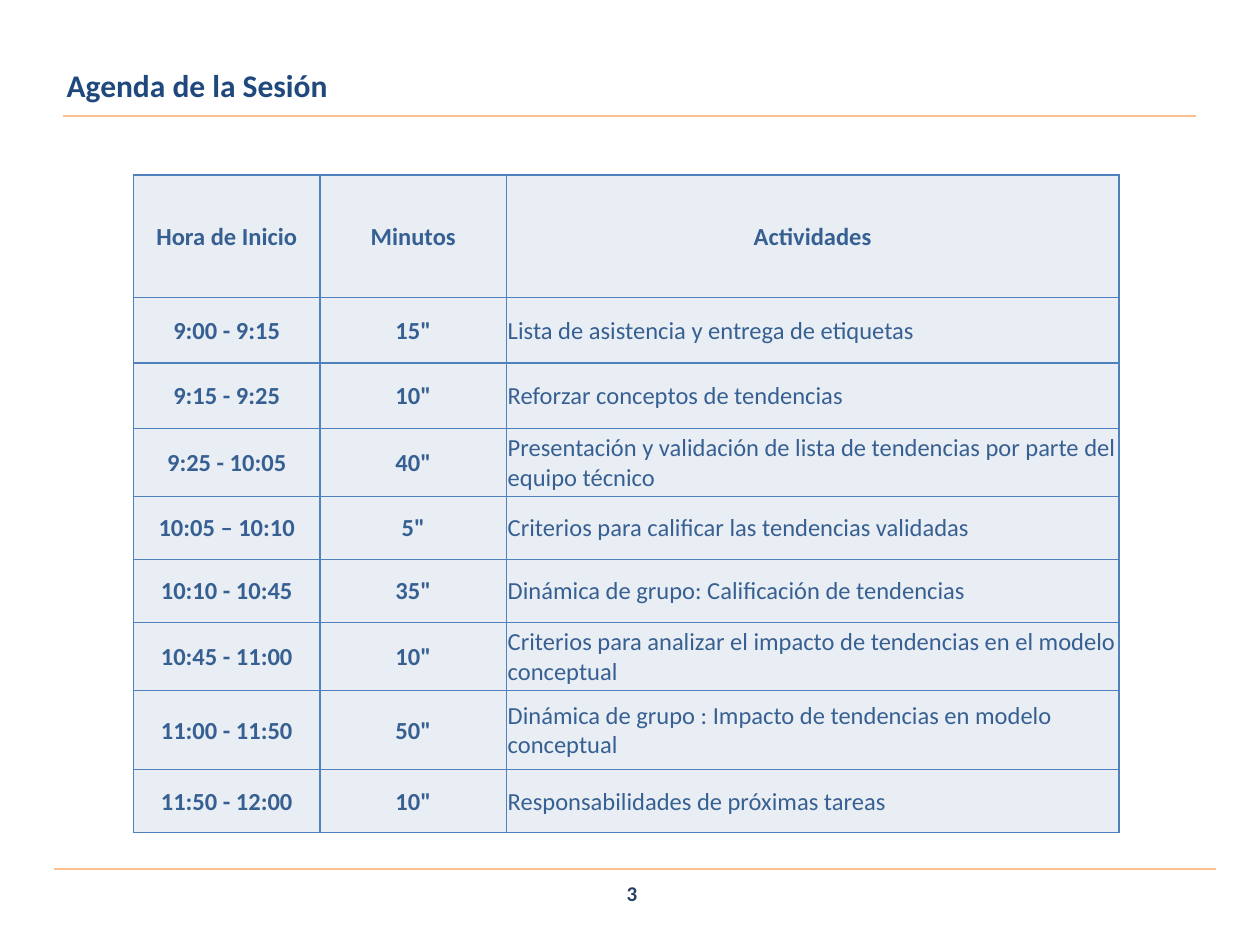
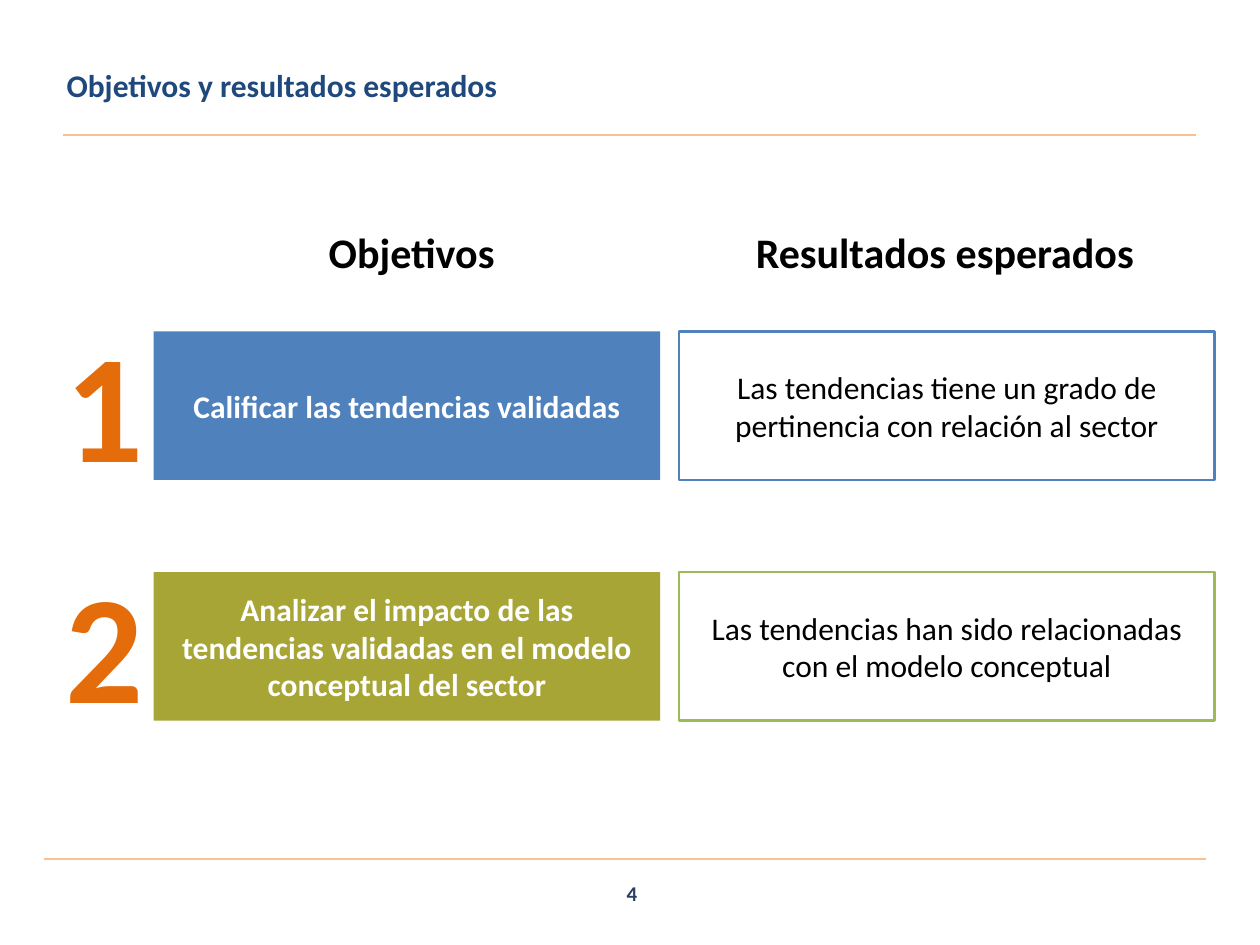
"""Builds the session agenda slide and the objectives slide."""
from dataclasses import dataclass

from lxml.etree import SubElement
from pptx import Presentation
from pptx.dml.color import RGBColor as Rgb
from pptx.enum.shapes import MSO_CONNECTOR as Connector, MSO_SHAPE as Shape
from pptx.enum.text import MSO_ANCHOR as Anchor, PP_ALIGN as Align
from pptx.oxml.ns import qn
from pptx.util import Inches, Pt


@dataclass(frozen=True)
class Theme:
    font: str = "Calibri"
    title: str = "1F497D"
    rule: str = "FAC090"
    page_number: str = "254061"
    table_text: str = "376092"
    table_fill: str = "E9EDF4"
    blue: str = "4F81BD"
    olive: str = "A7A536"
    green: str = "9BBB59"
    orange: str = "E46C0A"
    black: str = "000000"
    white: str = "FFFFFF"
    small_size: int = 12
    table_size: int = 14
    body_size: int = 18
    heading_size: int = 24
    numeral_size: int = 88
    rule_width: float = 1.25
    box_line_width: float = 1.5
    border_width: float = 1


THEME = Theme()

HEADERS = ("Hora de Inicio", "Minutos", "Actividades")
AGENDA = (
    ("9:00 - 9:15", '15"', "Lista de asistencia y entrega de etiquetas"),
    ("9:15 - 9:25", '10"', "Reforzar conceptos de tendencias"),
    ("9:25 - 10:05", '40"', "Presentación y validación de lista de tendencias por parte del equipo técnico"),
    ("10:05 – 10:10", '5"', "Criterios para calificar las tendencias validadas"),
    ("10:10 - 10:45", '35"', "Dinámica de grupo: Calificación de tendencias"),
    ("10:45 - 11:00", '10"', "Criterios para analizar el impacto de tendencias en el modelo conceptual"),
    ("11:00 - 11:50", '50"', "Dinámica de grupo : Impacto de tendencias en modelo conceptual"),
    ("11:50 - 12:00", '10"', "Responsabilidades de próximas tareas"),
)
COLUMN_WIDTHS = (1.48, 1.48, 4.86)
ROW_HEIGHTS = (0.97, 0.52, 0.52, 0.54, 0.5, 0.5, 0.54, 0.63, 0.5)

GOALS = (
    ("Calificar las tendencias validadas",
     "Las tendencias tiene un grado de pertinencia con relación al sector",
     THEME.blue, THEME.blue),
    ("Analizar el impacto de las tendencias validadas en el modelo conceptual del sector",
     "Las tendencias han sido relacionadas con el modelo conceptual",
     THEME.olive, THEME.green),
)
GOAL_TOP, GOAL_STEP, GOAL_HEIGHT = 2.63, 1.91, 1.18


def write_text(frame, text, size, color, bold=True, align=Align.CENTER):
    frame.word_wrap = True
    frame.text = text
    para = frame.paragraphs[0]
    para.alignment = align
    for span in para.runs:
        font = span.font
        font.name, font.size, font.bold = THEME.font, Pt(size), bold
        font.color.rgb = Rgb.from_string(color)
    return para


def add_label(page, place, text, size, color, align=Align.CENTER, anchor=Anchor.TOP):
    box = page.shapes.add_textbox(*map(Inches, place))
    box.text_frame.vertical_anchor = anchor
    return write_text(box.text_frame, text, size, color, align=align)


def add_rule(page, left, right, height):
    rule = page.shapes.add_connector(
        Connector.STRAIGHT, Inches(left), Inches(height), Inches(right), Inches(height))
    rule.line.color.rgb = Rgb.from_string(THEME.rule)
    rule.line.width = Pt(THEME.rule_width)
    SubElement(rule.element.spPr, qn("a:effectLst"))


def add_box(page, place, text, color, fill=None, line=None, bold=False):
    box = page.shapes.add_shape(Shape.RECTANGLE, *map(Inches, place))
    box.shadow.inherit = False
    if fill:
        box.fill.solid()
        box.fill.fore_color.rgb = Rgb.from_string(fill)
    else:
        box.fill.background()
    if line:
        box.line.color.rgb = Rgb.from_string(line)
        box.line.width = Pt(THEME.box_line_width)
    else:
        box.line.fill.background()
    box.text_frame.vertical_anchor = Anchor.MIDDLE
    write_text(box.text_frame, text, THEME.body_size, color, bold)


def add_page(deck, title, number, title_rule, footer_rule):
    page = deck.slides.add_slide(deck.slide_layouts[6])
    add_rule(page, *footer_rule)
    add_rule(page, 0.5, 9.49, title_rule)
    para = add_label(page, (0.43, 0.44, 8.99, 0.47), title, THEME.body_size,
                     THEME.title, Align.JUSTIFY, Anchor.MIDDLE)
    para.space_before = Pt(THEME.body_size * 0.2)
    add_label(page, (3.85, 6.89, 2.33, 0.4), str(number), THEME.small_size,
              THEME.page_number, anchor=Anchor.MIDDLE)
    return page


def add_borders(cell):
    properties = cell._tc.get_or_add_tcPr()
    for side in ("lnL", "lnR", "lnT", "lnB"):
        border = SubElement(properties, qn(f"a:{side}"), w=str(Pt(THEME.border_width)))
        fill = SubElement(border, qn("a:solidFill"))
        SubElement(fill, qn("a:srgbClr"), val=THEME.blue)


def fill_cell(cell, text, bold, align):
    cell.margin_left = cell.margin_right = cell.margin_top = Inches(0.01)
    cell.margin_bottom = 0
    cell.vertical_anchor = Anchor.MIDDLE
    add_borders(cell)
    cell.fill.solid()
    cell.fill.fore_color.rgb = Rgb.from_string(THEME.table_fill)
    write_text(cell.text_frame, text, THEME.table_size, THEME.table_text, bold, align)


def add_agenda(page):
    rows = (HEADERS, *AGENDA)
    size = (sum(COLUMN_WIDTHS), sum(ROW_HEIGHTS))
    table = page.shapes.add_table(
        len(rows), len(HEADERS), *map(Inches, (1.06, 1.39, *size))).table
    table.first_row = table.horz_banding = False
    for column, width in zip(table.columns, COLUMN_WIDTHS):
        column.width = Inches(width)
    for row, height in zip(table.rows, ROW_HEIGHTS):
        row.height = Inches(height)
    for r, texts in enumerate(rows):
        for c, text in enumerate(texts):
            is_activity = r > 0 and c == 2
            align = Align.LEFT if is_activity else Align.CENTER
            fill_cell(table.cell(r, c), text, not is_activity, align)


def add_goal(page, index, goal, result, fill, line):
    top = GOAL_TOP + index * GOAL_STEP
    add_box(page, (1.22, top, 4.02, GOAL_HEIGHT), goal, THEME.white, fill=fill, bold=True)
    add_label(page, (0.28, top - 0.23, 1.1, 1.58), str(index + 1),
              THEME.numeral_size, THEME.orange)
    add_box(page, (5.39, top, 4.25, GOAL_HEIGHT), result, THEME.black, line=line)


def main():
    deck = Presentation()
    deck.slide_width, deck.slide_height = Inches(10), Inches(7.5)

    agenda = add_page(deck, "Agenda de la Sesión", 3, 0.92, (0.43, 9.65, 6.9))
    add_agenda(agenda)

    goals = add_page(deck, "Objetivos y resultados esperados", 4, 1.07, (0.35, 9.57, 6.82))
    add_label(goals, (2.24, 1.75, 2.13, 0.5), "Objetivos ", THEME.heading_size, THEME.black)
    add_label(goals, (5.9, 1.75, 3.32, 0.5), "Resultados esperados",
              THEME.heading_size, THEME.black, Align.LEFT)
    for index, goal in enumerate(GOALS):
        add_goal(goals, index, *goal)

    deck.save("out.pptx")


if __name__ == "__main__":
    main()
